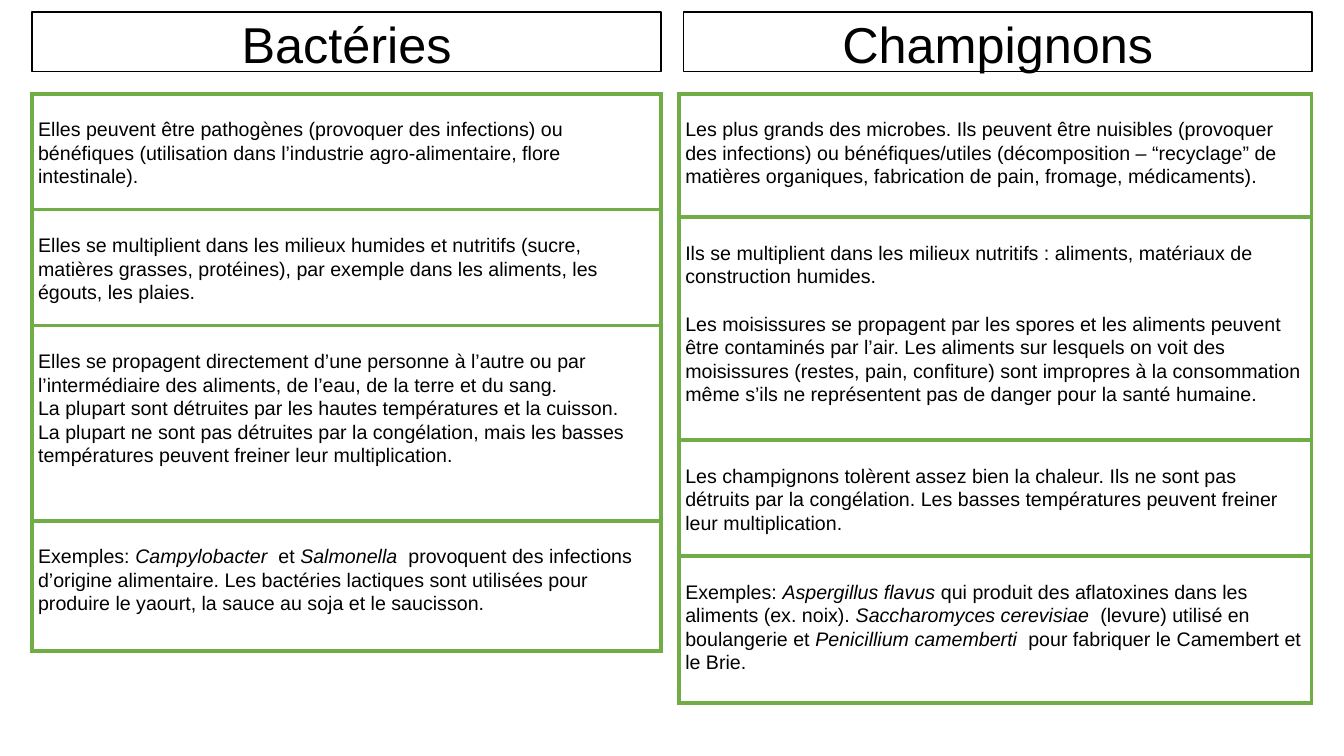
from dataclasses import dataclass

from lxml import etree
from pptx import Presentation
from pptx import util as u
from pptx.dml.color import RGBColor
from pptx.enum import shapes, text
from pptx.oxml import ns


@dataclass(frozen=True)
class Theme:
    font: str = "Arial"
    ink: str = "000000"
    paper: str = "FFFFFF"
    border: str = "70AD47"
    heading_size: int = 36
    body_size: int = 14
    heading_line: float = 1
    border_line: float = 3
    line_spacing: float = 1.07


class SlideBuilder:
    def __init__(self, presentation, theme):
        self.theme = theme
        self.slide = presentation.slides.add_slide(presentation.slide_layouts[6])

    def format_run(self, run, size, italic=False):
        run.font.name = self.theme.font
        run.font.size = u.Pt(size)
        run.font.italic = italic
        run.font.color.rgb = RGBColor.from_string(self.theme.ink)

    def heading(self, words, left, top, width, height):
        box = self.slide.shapes.add_shape(
            shapes.MSO_SHAPE.RECTANGLE, u.Cm(left), u.Cm(top), u.Cm(width), u.Cm(height))
        box.shadow.inherit = False
        box.fill.solid()
        box.fill.fore_color.rgb = RGBColor.from_string(self.theme.paper)
        box.line.color.rgb = RGBColor.from_string(self.theme.ink)
        box.line.width = u.Pt(self.theme.heading_line)
        box.text_frame.text = words
        box.text_frame.vertical_anchor = text.MSO_ANCHOR.MIDDLE
        paragraph = box.text_frame.paragraphs[0]
        paragraph.alignment = text.PP_ALIGN.CENTER
        paragraph.line_spacing = self.theme.line_spacing
        paragraph.space_after = u.Pt(8)
        self.format_run(paragraph.runs[0], self.theme.heading_size)

    def table(self, rows, left, top, width):
        """Each row is (height, gap between paragraphs in points, paragraphs)."""
        total = sum(height for height, _, _ in rows)
        table = self.slide.shapes.add_table(
            len(rows), 1, u.Cm(left), u.Cm(top), u.Cm(width), u.Cm(total)).table
        table.first_row = table.horz_banding = False
        for index, (height, gap, paragraphs) in enumerate(rows):
            table.rows[index].height = u.Cm(height)
            self.cell(table.cell(index, 0), paragraphs, gap)

    def cell(self, cell, paragraphs, gap):
        cell.margin_left = cell.margin_right = u.Cm(0.15)
        cell.margin_top, cell.margin_bottom = u.Cm(0.6), 0
        cell.fill.solid()
        cell.fill.fore_color.rgb = RGBColor.from_string(self.theme.paper)
        self.cell_borders(cell)
        for index, words in enumerate(paragraphs):
            frame = cell.text_frame
            paragraph = frame.add_paragraph() if index else frame.paragraphs[0]
            paragraph.line_spacing = self.theme.line_spacing
            paragraph.space_before = u.Pt(gap if index else 0)
            # Words between asterisks are italic
            for position, part in enumerate(words.split("*")):
                run = paragraph.add_run()
                run.text = part
                self.format_run(run, self.theme.body_size, position % 2 == 1)

    def cell_borders(self, cell):
        properties = cell._tc.get_or_add_tcPr()
        for index, side in enumerate(("lnL", "lnR", "lnT", "lnB")):
            line = etree.Element(ns.qn(f"a:{side}"), w=str(u.Pt(self.theme.border_line)))
            fill = etree.SubElement(line, ns.qn("a:solidFill"))
            etree.SubElement(fill, ns.qn("a:srgbClr"), val=self.theme.border)
            properties.insert(index, line)


BACTERIA = [
    (2.92, 0, ["Elles peuvent être pathogènes (provoquer des infections) ou bénéfiques "
               "(utilisation dans l’industrie agro-alimentaire, flore intestinale)."]),
    (2.92, 0, ["Elles se multiplient dans les milieux humides et nutritifs (sucre, matières "
               "grasses, protéines), par exemple dans les aliments, les égouts, les plaies."]),
    (4.92, 0, ["Elles se propagent directement d’une personne à l’autre ou par "
               "l’intermédiaire des aliments, de l’eau, de la terre et du sang.",
               "La plupart sont détruites par les hautes températures et la cuisson.",
               "La plupart ne sont pas détruites par la congélation, mais les basses "
               "températures peuvent freiner leur multiplication."]),
    (3.28, 0, ["Exemples: *Campylobacter*  et *Salmonella*  provoquent des infections "
               "d’origine alimentaire. Les bactéries lactiques sont utilisées pour "
               "produire le yaourt, la sauce au soja et le saucisson."]),
]
FUNGI = [
    (3.11, 0, ["Les plus grands des microbes. Ils peuvent être nuisibles (provoquer des "
               "infections) ou bénéfiques/utiles (décomposition – “recyclage” de matières "
               "organiques, fabrication de pain, fromage, médicaments)."]),
    (5.62, 17, ["Ils se multiplient dans les milieux nutritifs : aliments, matériaux de "
                "construction humides.",
                "Les moisissures se propagent par les spores et les aliments peuvent être "
                "contaminés par l’air. Les aliments sur lesquels on voit des moisissures "
                "(restes, pain, confiture) sont impropres à la consommation même s’ils ne "
                "représentent pas de danger pour la santé humaine."]),
    (2.92, 0, ["Les champignons tolèrent assez bien la chaleur. Ils ne sont pas détruits par "
               "la congélation. Les basses températures peuvent freiner leur "
               "multiplication."]),
    (3.7, 0, ["Exemples: *Aspergillus flavus *qui produit des aflatoxines dans les aliments "
              "(ex. noix). *Saccharomyces cerevisiae  *(levure) utilisé en boulangerie et "
              "*Penicillium camemberti  *pour fabriquer le Camembert et le Brie."]),
]


def main():
    presentation = Presentation()
    presentation.slide_width, presentation.slide_height = u.Cm(33.87), u.Cm(19.05)
    builder = SlideBuilder(presentation, Theme())

    # One heading and one table per kind of microbe
    columns = [
        ("Bactéries", 0.81, BACTERIA, 0.81, 15.85),
        ("Champignons", 17.22, FUNGI, 17.12, 15.93),
    ]
    for name, heading_left, rows, table_left, table_width in columns:
        builder.heading(name, heading_left, 0.3, 15.85, 1.5)
        builder.table(rows, table_left, 2.36, table_width)

    presentation.save("out.pptx")


if __name__ == "__main__":
    main()
